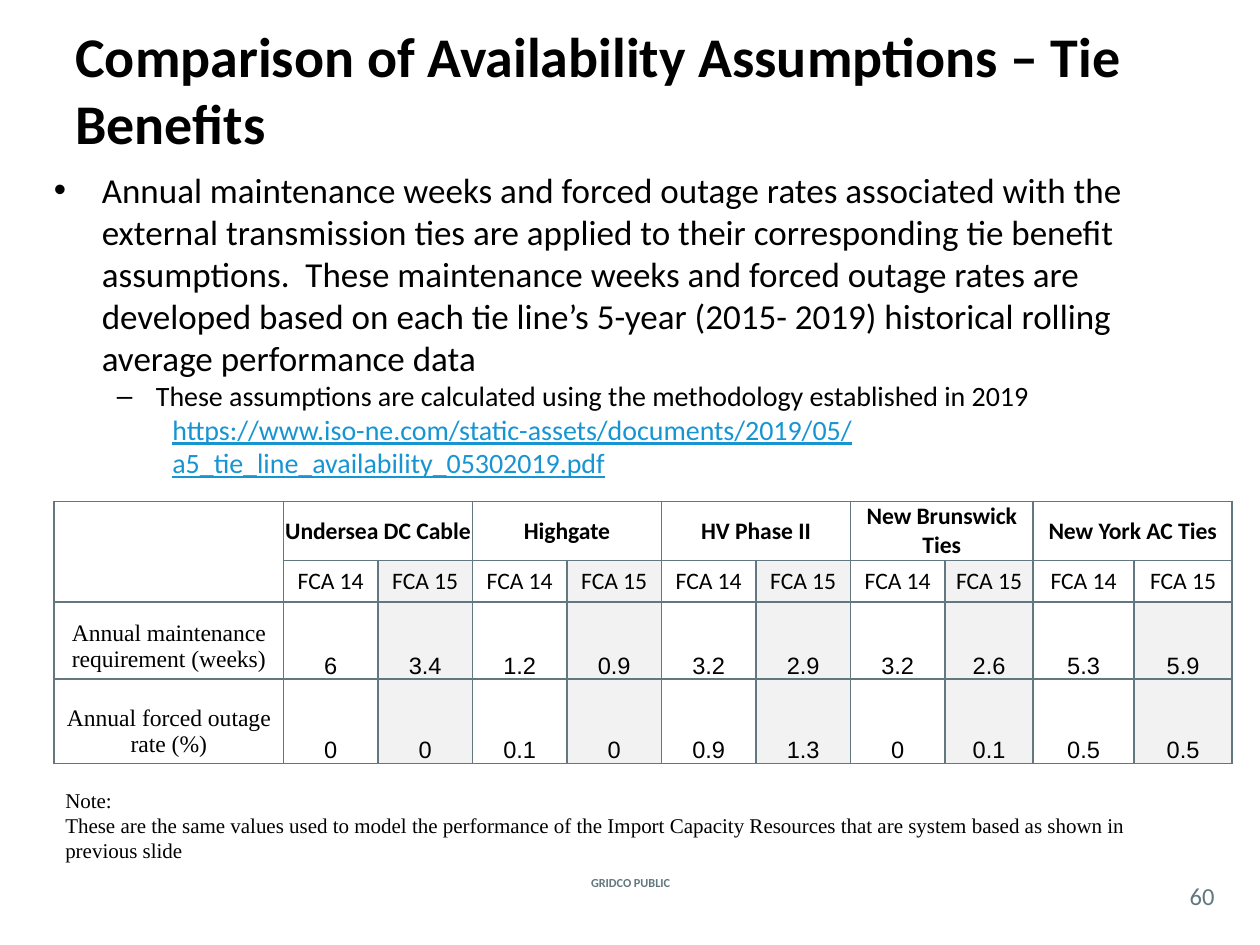
"""Build the slide comparing tie benefit availability assumptions."""
import pptx
import pptx.dml.color
import pptx.enum.text
import pptx.oxml
import pptx.oxml.ns
import pptx.util

Inches = pptx.util.Inches
Align = pptx.enum.text.PP_ALIGN
Anchor = pptx.enum.text.MSO_ANCHOR

COLORS = {"ink": "000000", "slate": "62777F", "link": "1795D2", "shade": "F2F2F2"}
TITLE = "Comparison of Availability Assumptions – Tie Benefits"
BODY = [
    ("Annual maintenance weeks and forced outage rates associated with the external "
     "transmission ties are applied to their corresponding tie benefit assumptions.  "
     "These maintenance weeks and forced outage rates are developed based on each tie "
     "line’s 5-year (2015- 2019) historical rolling average performance data",
     20, "ink", 0.38, -0.38, "•"),
    ("These assumptions are calculated using the methodology established in 2019",
     16, "ink", 0.81, -0.31, "–"),
    ("https://www.iso-ne.com/static-assets/documents/2019/05/"
     "a5_tie_line_availability_05302019.pdf", 16, "link", 0.94, 0, None),
]
TIES = ["Undersea DC Cable", "Highgate", "HV Phase II", "New Brunswick Ties",
        "New York AC Ties"]
YEARS = ["FCA 14", "FCA 15"]
RATES = [
    ("Annual maintenance requirement (weeks)",
     ["6", "3.4", "1.2", "0.9", "3.2", "2.9", "3.2", "2.6", "5.3", "5.9"]),
    ("Annual forced outage rate (%)",
     ["0", "0", "0.1", "0", "0.9", "1.3", "0", "0.1", "0.5", "0.5"]),
]
NOTE = [
    "Note:",
    "These are the same values used to model the performance of the Import Capacity "
    "Resources that are system based as shown in previous slide",
]
WIDTHS = [1.82] + [0.75] * 7 + [0.7, 0.8, 0.78]
HEIGHTS = [0.47, 0.33, 0.61, 0.67]


def paint(color):
    return pptx.dml.color.RGBColor.from_string(COLORS[color])


def write(para, text, size, face="Calibri", color="ink", bold=False, line=False):
    run = para.add_run()
    run.text = text
    font = run.font
    font.size, font.name = pptx.util.Pt(size), face
    font.bold, font.underline = bold, line
    font.color.rgb = paint(color)


def add_box(slide, place, anchor=Anchor.TOP, inset=None):
    frame = slide.shapes.add_textbox(*map(Inches, place)).text_frame
    frame.word_wrap = True
    frame.vertical_anchor = anchor
    if inset is not None:
        frame.margin_left = frame.margin_right = Inches(inset)
        frame.margin_top = frame.margin_bottom = Inches(inset)
    return frame


def next_para(frame, index):
    return frame.add_paragraph() if index else frame.paragraphs[0]


def indent(para, left, hang, mark):
    props = para._p.get_or_add_pPr()
    props.set("marL", str(Inches(left)))
    props.set("indent", str(Inches(hang)))
    space = pptx.oxml.ns.nsdecls("a")
    if mark:
        props.append(pptx.oxml.parse_xml(f'<a:buFont {space} typeface="Arial"/>'))
        props.append(pptx.oxml.parse_xml(f'<a:buChar {space} char="{mark}"/>'))


def outline(cell):
    props = cell._tc.get_or_add_tcPr()
    for rank, side in enumerate(("lnL", "lnR", "lnT", "lnB")):
        props.insert(rank, pptx.oxml.parse_xml(
            f'<a:{side} {pptx.oxml.ns.nsdecls("a")} w="12700"><a:solidFill>'
            f'<a:srgbClr val="{COLORS["slate"]}"/></a:solidFill></a:{side}>'))


def fill_cell(cell, text, face="Calibri", bold=False, anchor=Anchor.MIDDLE):
    cell.vertical_anchor = anchor
    para = cell.text_frame.paragraphs[0]
    para.alignment = Align.CENTER
    write(para, text, 13.5, face, bold=bold)


def add_grid(slide):
    grid = slide.shapes.add_table(
        len(HEIGHTS), len(WIDTHS), Inches(0.43), Inches(3.98),
        Inches(sum(WIDTHS)), Inches(sum(HEIGHTS))).table
    for col, width in zip(grid.columns, WIDTHS):
        col.width = Inches(width)
    for row, height in zip(grid.rows, HEIGHTS):
        row.height = Inches(height)
    last = len(WIDTHS) - 1
    for r in range(len(HEIGHTS)):
        for c in range(len(WIDTHS)):
            cell = grid.cell(r, c)
            if c or r < 2:
                cell.margin_left = cell.margin_right = 0
                cell.margin_top = cell.margin_bottom = 0
            if r and c and c % 2 == 0 and (r, c) != (1, last):
                cell.fill.solid()
                cell.fill.fore_color.rgb = paint("shade")
            else:
                cell.fill.background()
            outline(cell)
    grid.cell(0, 0).merge(grid.cell(1, 0))
    for i, tie in enumerate(TIES):
        col = 1 + 2 * i
        grid.cell(0, col).merge(grid.cell(0, col + 1))
        fill_cell(grid.cell(0, col), tie, bold=True)
        for k, year in enumerate(YEARS):
            fill_cell(grid.cell(1, col + k), year)
    for r, (label, rates) in enumerate(RATES, 2):
        fill_cell(grid.cell(r, 0), label, "Times New Roman", anchor=Anchor.BOTTOM)
        for c, rate in enumerate(rates, 1):
            fill_cell(grid.cell(r, c), rate, "Arial", anchor=Anchor.BOTTOM)


def main():
    deck = pptx.Presentation()
    deck.slide_width, deck.slide_height = Inches(10), Inches(7.5)
    slide = deck.slides.add_slide(deck.slide_layouts[6])

    foot = add_box(slide, (4.27, 6.92, 1.47, 0.17), Anchor.MIDDLE).paragraphs[0]
    foot.alignment = Align.CENTER
    write(foot, "GRIDCO PUBLIC", 7, color="slate", bold=True)
    page = add_box(slide, (9.33, 6.96, 0.42, 0.29), Anchor.MIDDLE, 0).paragraphs[0]
    page.alignment = Align.CENTER
    write(page, "60", 14, color="slate")

    title = add_box(slide, (0.5, 0.08, 9, 1.25), Anchor.MIDDLE)
    write(title.paragraphs[0], TITLE, 32, bold=True)

    body = add_box(slide, (0.33, 1.29, 9, 5.26))
    for i, (text, size, color, left, hang, mark) in enumerate(BODY):
        para = next_para(body, i)
        indent(para, left, hang, mark)
        write(para, text, size, color=color, line=color == "link")

    add_grid(slide)

    note = add_box(slide, (0.42, 6.2, 8.83, 1.11))
    for i, text in enumerate(NOTE):
        write(next_para(note, i), text, 12, "Times New Roman")
    deck.save("out.pptx")


if __name__ == "__main__":
    main()
